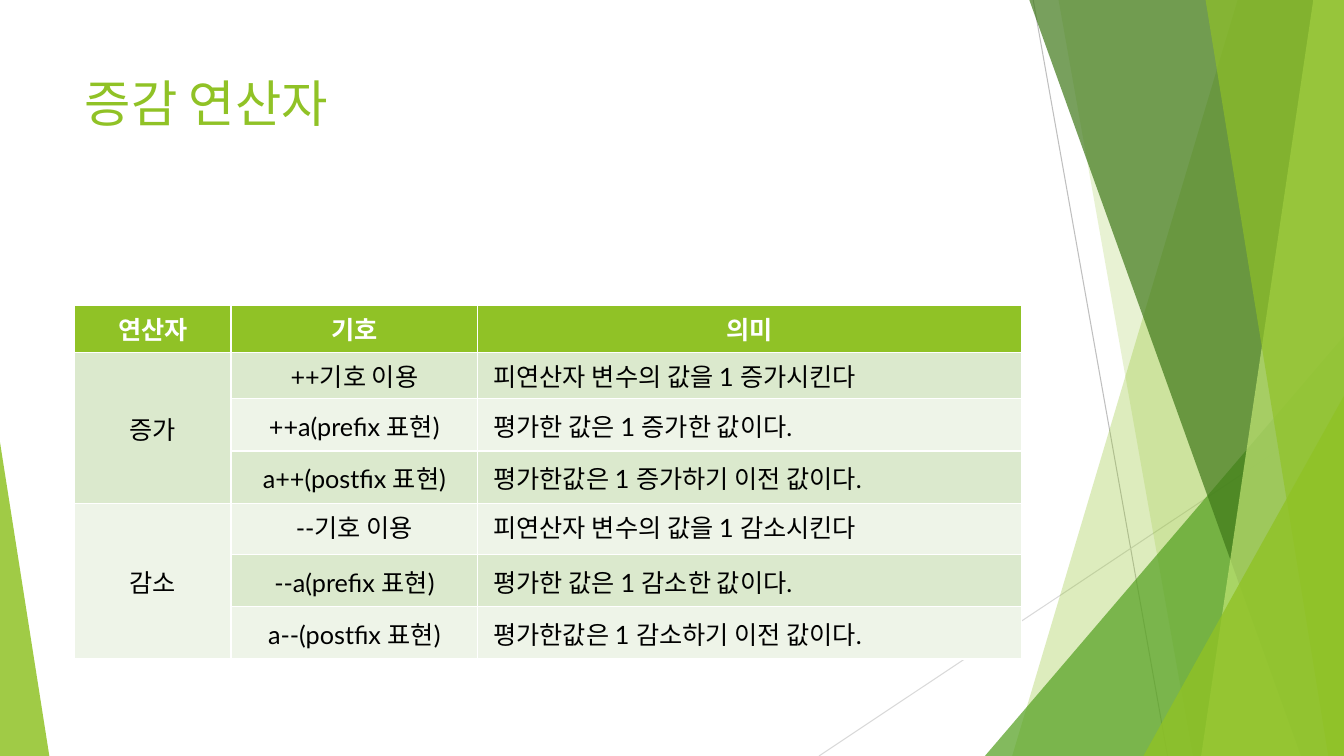
from dataclasses import dataclass

from lxml import etree
from pptx import Presentation
from pptx.dml.color import RGBColor
from pptx.enum.shapes import MSO_CONNECTOR, MSO_SHAPE
from pptx.enum.text import MSO_ANCHOR, MSO_AUTO_SIZE, PP_ALIGN
from pptx.oxml.ns import qn
from pptx.shapes.autoshape import Shape
from pptx.slide import Slide
from pptx.table import _Cell
from pptx.util import Emu, Pt

STRAIGHT = MSO_CONNECTOR.STRAIGHT
TRIANGLE = MSO_SHAPE.ISOSCELES_TRIANGLE
TOP, MIDDLE = MSO_ANCHOR.TOP, MSO_ANCHOR.MIDDLE
NO_AUTOFIT = MSO_AUTO_SIZE.NONE
LEFT, CENTER, JUSTIFY = PP_ALIGN.LEFT, PP_ALIGN.CENTER, PP_ALIGN.JUSTIFY

PX = 9525
WIDTH, HEIGHT = 1280, 720
FONT = "Lato"
TITLE_ONLY_LAYOUT = 5

LIME = RGBColor(0x90, 0xC2, 0x26)
PALE_LIME = RGBColor(0xC0, 0xE4, 0x74)
GREEN = RGBColor(0x54, 0xA0, 0x21)
DARK_GREEN = RGBColor(0x3F, 0x78, 0x19)
BAND_DARK = RGBColor(0xDB, 0xE9, 0xCD)
BAND_LIGHT = RGBColor(0xEE, 0xF4, 0xE8)
GRAY = RGBColor(0xBF, 0xBF, 0xBF)
LIGHT_GRAY = RGBColor(0xD9, 0xD9, 0xD9)
BLACK = RGBColor(0x00, 0x00, 0x00)
WHITE = RGBColor(0xFF, 0xFF, 0xFF)


@dataclass(frozen=True)
class Ray:
    start: tuple[int, int]
    end: tuple[int, int]
    color: RGBColor


@dataclass(frozen=True)
class Blade:
    """Full-height facet whose slanted left edge ends at the right slide edge."""
    top_x: int
    bottom_x: int
    color: RGBColor
    opacity: int


@dataclass(frozen=True)
class Corner:
    """Right triangle standing on the bottom slide edge."""
    left: int
    top: int
    width: int
    apex: float
    color: RGBColor
    opacity: int


@dataclass(frozen=True)
class OperatorRow:
    symbol: str
    meaning: str
    height: int
    anchor: MSO_ANCHOR
    band: RGBColor


RAYS = (
    Ray((984, 0), (1112, HEIGHT), GRAY),
    Ray((WIDTH, 387), (780, HEIGHT), LIGHT_GRAY),
)
FACETS = (
    Blade(1179, 964, LIME, 30),
    Blade(1008, 1136, LIME, 20),
    Corner(938, 320, 342, 1, GREEN, 72),
    Blade(980, 1239, DARK_GREEN, 70),
    Blade(1251, 1144, PALE_LIME, 70),
    Blade(1148, 1265, LIME, 65),
    Corner(1089, 377, 191, 1, LIME, 80),
    Corner(0, 421, 47, 0, LIME, 85),
)

HEADINGS = ("연산자", "기호", "의미")
COLUMN_WIDTHS = (149, 235, 518)
HEADER_HEIGHT = 43
OPERATORS = (
    OperatorRow("++기호 이용", "피연산자 변수의 값을 1 증가시킨다", 43, TOP, BAND_DARK),
    OperatorRow("++a(prefix 표현)", "평가한 값은 1 증가한 값이다.", 49, MIDDLE, BAND_LIGHT),
    OperatorRow("a++(postfix 표현)", "평가한값은 1 증가하기 이전 값이다.", 49, MIDDLE, BAND_DARK),
    OperatorRow("--기호 이용", "피연산자 변수의 값을 1 감소시킨다", 49, TOP, BAND_LIGHT),
    OperatorRow("--a(prefix 표현)", "평가한 값은 1 감소한 값이다.", 49, MIDDLE, BAND_DARK),
    OperatorRow("a--(postfix 표현)", "평가한값은 1 감소하기 이전 값이다.", 49, MIDDLE, BAND_LIGHT),
)
GROUPS = ("증가", "감소")
GROUP_SIZE = len(OPERATORS) // len(GROUPS)


def px(*lengths: int) -> list[Emu]:
    return [Emu(length * PX) for length in lengths]


def draw_ray(slide: Slide, ray: Ray) -> None:
    connector = slide.shapes.add_connector(STRAIGHT, *px(*ray.start, *ray.end))
    connector.line.color.rgb = ray.color
    connector.line.width = Pt(0.75)
    etree.SubElement(connector._element.spPr, qn("a:effectLst"))


def outline_blade(slide: Slide, blade: Blade) -> Shape:
    builder = slide.shapes.build_freeform(blade.top_x, -1, scale=PX)
    builder.add_line_segments([(WIDTH, -1), (WIDTH, HEIGHT), (blade.bottom_x, HEIGHT)])
    return builder.convert_to_shape()


def outline_corner(slide: Slide, corner: Corner) -> Shape:
    box = px(corner.left, corner.top, corner.width, HEIGHT - corner.top)
    triangle = slide.shapes.add_shape(TRIANGLE, *box)
    triangle.adjustments[0] = corner.apex
    return triangle


def draw_facet(slide: Slide, facet: Blade | Corner) -> None:
    outline = outline_blade if isinstance(facet, Blade) else outline_corner
    shape = outline(slide, facet)
    shape.shadow.inherit = False
    shape.line.fill.background()
    shape.fill.solid()
    shape.fill.fore_color.rgb = facet.color
    color = shape._element.spPr.find(qn("a:solidFill"))[0]
    etree.SubElement(color, qn("a:alpha"), val=str(facet.opacity * 1000))


def write_title(slide: Slide, text: str) -> None:
    title = slide.shapes.title
    title.left, title.top, title.width, title.height = px(71, 64, 902, 138)
    frame = title.text_frame
    frame.text = text
    frame.word_wrap = True
    frame.auto_size = NO_AUTOFIT
    frame.vertical_anchor = TOP
    paragraph = frame.paragraphs[0]
    paragraph.alignment = LEFT
    paragraph.font.name = FONT
    paragraph.font.size = Pt(36)
    paragraph.font.color.rgb = LIME


def write_cell(cell: _Cell, text: str, fill: RGBColor, anchor: MSO_ANCHOR = TOP,
               align: PP_ALIGN = CENTER, heading: bool = False) -> None:
    cell.text = text
    cell.fill.solid()
    cell.fill.fore_color.rgb = fill
    cell.vertical_anchor = anchor
    if anchor == MIDDLE:
        cell.margin_top, cell.margin_bottom = px(8, 7)
    if align == JUSTIFY:
        cell.margin_left = Emu(15 * PX)
    paragraph = cell.text_frame.paragraphs[0]
    paragraph.alignment = align
    paragraph.font.name = FONT
    paragraph.font.size = Pt(18)
    paragraph.font.bold = heading
    paragraph.font.color.rgb = WHITE if heading else BLACK


def draw_operator_table(slide: Slide) -> None:
    heights = (HEADER_HEIGHT, *(operator.height for operator in OPERATORS))
    box = px(71, 291, sum(COLUMN_WIDTHS), sum(heights))
    table = slide.shapes.add_table(len(heights), len(COLUMN_WIDTHS), *box).table
    for column, width in zip(table.columns, COLUMN_WIDTHS):
        column.width = Emu(width * PX)
    for row, height in zip(table.rows, heights):
        row.height = Emu(height * PX)

    for column, heading in enumerate(HEADINGS):
        write_cell(table.cell(0, column), heading, LIME, heading=True)
    for row, operator in enumerate(OPERATORS, start=1):
        write_cell(table.cell(row, 1), operator.symbol, operator.band, operator.anchor)
        write_cell(table.cell(row, 2), operator.meaning, operator.band, operator.anchor, JUSTIFY)
    for index, group in enumerate(GROUPS):
        first = index * GROUP_SIZE
        cell = table.cell(first + 1, 0)
        cell.merge(table.cell(first + GROUP_SIZE, 0))
        write_cell(cell, group, OPERATORS[first].band, MIDDLE)


def main() -> None:
    presentation = Presentation()
    presentation.slide_width, presentation.slide_height = px(WIDTH, HEIGHT)
    slide = presentation.slides.add_slide(presentation.slide_layouts[TITLE_ONLY_LAYOUT])
    for ray in RAYS:
        draw_ray(slide, ray)
    for facet in FACETS:
        draw_facet(slide, facet)
    write_title(slide, "증감 연산자")
    draw_operator_table(slide)
    presentation.save("out.pptx")


if __name__ == "__main__":
    main()
